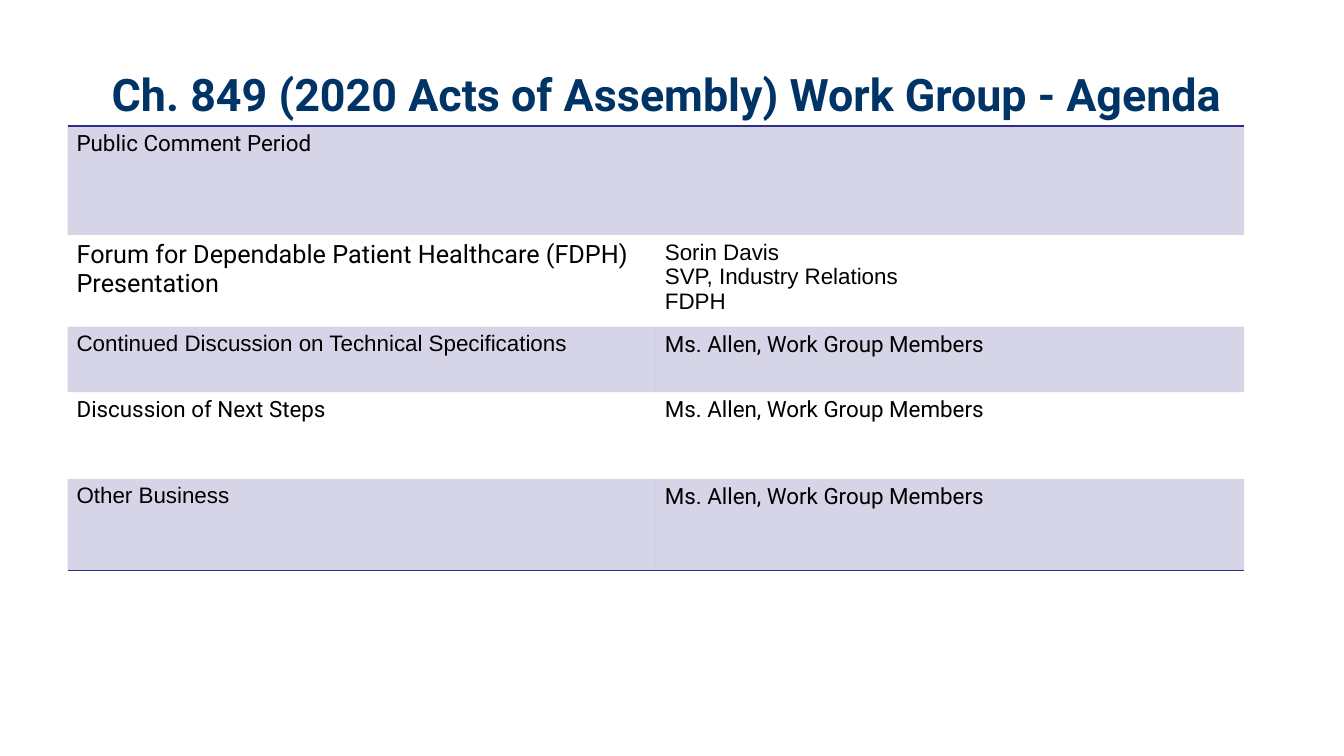
from dataclasses import dataclass

from lxml.etree import SubElement
from pptx import Presentation
from pptx.dml.color import RGBColor
from pptx.enum.text import MSO_ANCHOR, PP_ALIGN
from pptx.oxml import parse_xml
from pptx.oxml.ns import nsdecls, qn
from pptx.util import Inches, Pt


@dataclass(frozen=True)
class Theme:
    navy: str = "003366"
    band: str = "2D2D8A"
    ink: str = "000000"
    sans: str = "Roboto"
    plain: str = "Arial"
    head: int = 32
    large: int = 18
    body: int = 16


THEME = Theme()
NO_GRID = "{2D5ABB26-0587-4C30-8999-92F81FD0307C}"
HEIGHTS = (1.08, 0.91, 0.65, 0.86, 0.91)
MEMBERS = ("Ms. Allen, Work Group Members", THEME.sans, THEME.body)

# Each cell: text, font, size
AGENDA = (
    (("Public Comment Period", THEME.sans, THEME.body),),
    (("Forum for Dependable Patient Healthcare (FDPH) Presentation",
      THEME.sans, THEME.large),
     ("Sorin Davis\nSVP, Industry Relations\nFDPH",
      THEME.plain, THEME.body)),
    (("Continued Discussion on Technical Specifications",
      THEME.plain, THEME.body), MEMBERS),
    (("Discussion of Next Steps", THEME.sans, THEME.body), MEMBERS),
    (("Other Business", THEME.plain, THEME.body), MEMBERS),
)


def style(frame, font, size, color, bold=False):
    for para in frame.paragraphs:
        for run in para.runs:
            run.font.name = font
            run.font.size = Pt(size)
            run.font.bold = bold
            run.font.color.rgb = RGBColor.from_string(color)


def add_title(slide, text):
    title = slide.shapes.title
    title.left, title.top = Inches(0.67), Inches(0.3)
    title.width, title.height = Inches(12), Inches(1.25)
    frame = title.text_frame
    frame.text = text
    frame.word_wrap = True
    frame.vertical_anchor = MSO_ANCHOR.MIDDLE
    frame.paragraphs[0].alignment = PP_ALIGN.CENTER
    style(frame, THEME.sans, THEME.head, THEME.navy, True)


def shade(cell):
    cell.fill.solid()
    cell.fill.fore_color.rgb = RGBColor.from_string(THEME.band)
    color = cell._tc.tcPr.find(qn("a:solidFill"))[0]
    SubElement(color, qn("a:alpha"), val="20000")


def rule(cell, side):
    line = parse_xml(
        f'<a:{side} {nsdecls("a")} w="{Pt(1)}"><a:solidFill>'
        f'<a:srgbClr val="{THEME.band}"/></a:solidFill></a:{side}>')
    cell._tc.get_or_add_tcPr().insert(0, line)


def fill_cell(cell, text, font, size):
    cell.margin_left = cell.margin_right = Inches(0.09)
    cell.margin_top = cell.margin_bottom = Inches(0.05)
    cell.text_frame.text = text
    style(cell.text_frame, font, size, THEME.ink)


def add_agenda(slide):
    table = slide.shapes.add_table(
        len(AGENDA), 2, Inches(0.67), Inches(1.25),
        Inches(11.67), Inches(sum(HEIGHTS))).table
    table.first_row = table.horz_banding = False
    table._tbl.tblPr.find(qn("a:tableStyleId")).text = NO_GRID
    for row, height in zip(table.rows, HEIGHTS):
        row.height = Inches(height)

    # Text and alternate row bands
    for i, entry in enumerate(AGENDA):
        for j, item in enumerate(entry):
            fill_cell(table.cell(i, j), *item)
        if i % 2 == 0:
            for cell in table.rows[i].cells:
                shade(cell)
    table.cell(0, 0).merge(table.cell(0, 1))

    # Rules above and below the table
    for j in range(2):
        rule(table.cell(0, j), "lnT")
        rule(table.cell(len(AGENDA) - 1, j), "lnB")


def main():
    deck = Presentation()
    deck.slide_width, deck.slide_height = Inches(13.33), Inches(7.5)
    slide = deck.slides.add_slide(deck.slide_layouts[5])
    add_title(slide, "Ch. 849 (2020 Acts of Assembly) Work Group - Agenda ")
    add_agenda(slide)
    deck.save("out.pptx")


if __name__ == "__main__":
    main()
